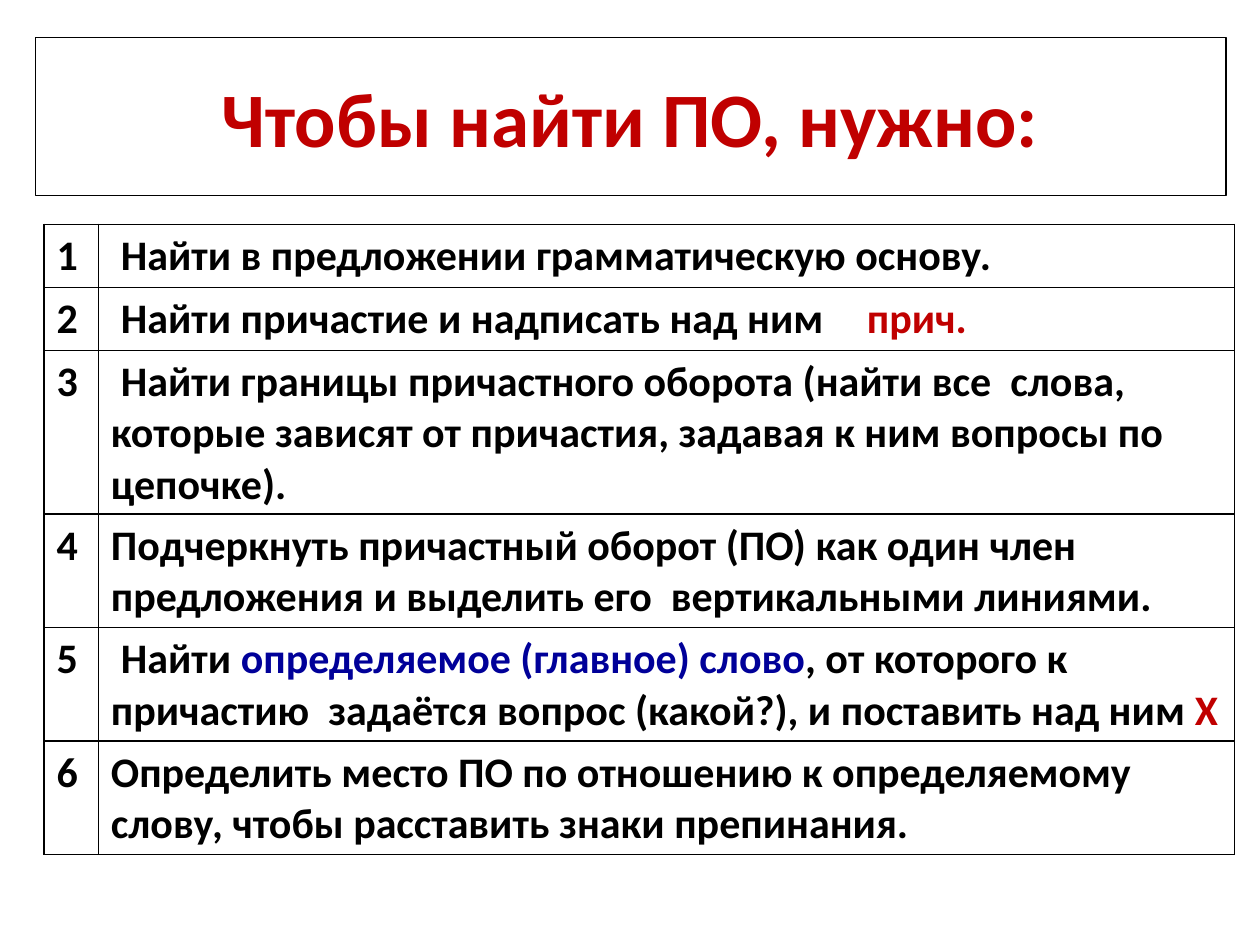
from lxml.etree import SubElement
from pptx import Presentation
from pptx.dml.color import RGBColor
from pptx.enum.text import MSO_ANCHOR as Anchor, PP_ALIGN as Align
from pptx.oxml import parse_xml
from pptx.oxml.ns import nsdecls, qn
from pptx.util import Inches, Pt

COLORS = {"ink": "000000", "red": "C00000", "blue": "000099"}
FONT = "Calibri"

deck = Presentation()
deck.slide_width, deck.slide_height = Inches(10), Inches(7.5)
slide = deck.slides.add_slide(deck.slide_layouts[6])


def write(paragraph, text, size=24, color="ink", bold=True):
    run = paragraph.add_run()
    run.text = text
    run.font.name = FONT
    run.font.size = Pt(size)
    run.font.bold = bold
    run.font.color.rgb = RGBColor.from_string(COLORS[color])


def draw_borders(cell, width=1):
    properties = cell._tc.get_or_add_tcPr()
    for place, side in enumerate(("lnL", "lnR", "lnT", "lnB")):
        properties.insert(place, parse_xml(
            f'<a:{side} {nsdecls("a")} w="{Pt(width)}"><a:solidFill>'
            f'<a:srgbClr val="{COLORS["ink"]}"/></a:solidFill></a:{side}>'))


content_width = Inches(9.45)
heading = slide.shapes.add_textbox(Inches(0.28), Inches(0.3), content_width, Inches(1.25))
heading.line.color.rgb = RGBColor.from_string(COLORS["ink"])
heading.line.width = Pt(0.75)
heading.text_frame.word_wrap = True
heading.text_frame.vertical_anchor = Anchor.MIDDLE
heading_line = heading.text_frame.paragraphs[0]
heading_line.alignment = Align.CENTER
write(heading_line, "Чтобы найти ПО, нужно:", size=44, color="red")

steps = [
    (1, 0.08, [("Найти в предложении грамматическую основу.", "ink")]),
    (1, 0.08, [("Найти причастие и надписать над ним\t", "ink"), ("прич.", "red")]),
    (3, 0.08, [("Найти границы причастного оборота (найти все  слова, которые зависят "
                "от причастия, задавая к ним вопросы по цепочке).", "ink")]),
    (2, 0, [("Подчеркнуть причастный оборот (ПО) как один член предложения "
             "и выделить его  вертикальными линиями.", "ink")]),
    (2, 0.08, [("Найти ", "ink"), ("определяемое (главное) слово", "blue"),
               (", от которого к причастию  задаётся вопрос (какой?), "
                "и поставить над ним ", "ink"), ("Х", "red")]),
    (2, 0, [("Определить место ПО по отношению к определяемому слову, "
             "чтобы расставить знаки препинания.", "ink")]),
]
line_height, cell_padding = 0.4, 0.1
total_lines = sum(lines for lines, _, _ in steps)
plan = slide.shapes.add_table(
    len(steps), 2, Inches(0.35), Inches(1.78), content_width,
    Inches(total_lines * line_height + len(steps) * cell_padding)).table
plan.first_row = plan.horz_banding = False
number_width = Inches(0.43)
plan.columns[0].width = number_width
plan.columns[1].width = content_width - number_width

for row, (lines, indent, parts) in enumerate(steps):
    plan.rows[row].height = Inches(lines * line_height + cell_padding)
    number, action = plan.cell(row, 0), plan.cell(row, 1)
    for cell in (number, action):
        cell.fill.background()
        draw_borders(cell)
    write(number.text_frame.paragraphs[0], str(row + 1))
    sentence = action.text_frame.paragraphs[0]
    layout = sentence._p.get_or_add_pPr()
    layout.set("marL", "0")
    layout.set("indent", str(Inches(indent)))
    if "\t" in parts[0][0]:
        stops = SubElement(layout, qn("a:tabLst"))
        SubElement(stops, qn("a:tab"), pos=str(Inches(6.04)), algn="l")
    for text, color in parts:
        write(sentence, text, color=color)

deck.save("out.pptx")
